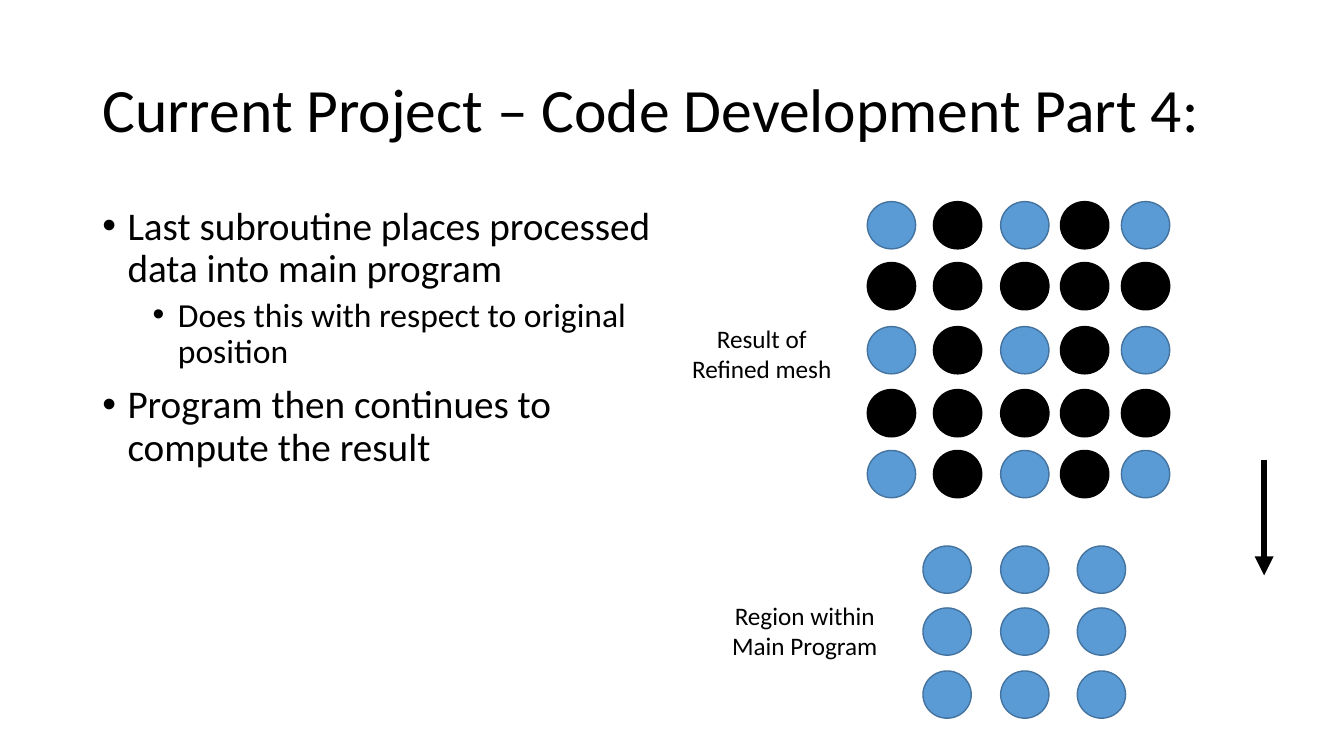
from lxml import etree
from pptx import Presentation
from pptx.dml.color import RGBColor
from pptx.enum.shapes import MSO_CONNECTOR, MSO_SHAPE
from pptx.enum.text import MSO_ANCHOR, MSO_AUTO_SIZE, PP_ALIGN
from pptx.oxml.ns import qn
from pptx.util import Pt

PX = 9525
STRAIGHT = MSO_CONNECTOR.STRAIGHT
ELLIPSE = MSO_SHAPE.OVAL
MIDDLE = MSO_ANCHOR.MIDDLE
CENTER = PP_ALIGN.CENTER
GROW = MSO_AUTO_SIZE.SHAPE_TO_FIT_TEXT

BLACK = "000000"
COARSE_NODE = ("5B9BD5", "43739E")
REFINED_NODE = (BLACK, BLACK)
NODE_SIZE = (46, 45)

MESH_COLUMNS = (826, 889, 953, 1010, 1068)
MESH_ROWS = (192, 250, 311, 371, 429)
REGION_COLUMNS = (879, 953, 1026)
REGION_ROWS = (520, 579, 639)

TITLE = {"line_spacing": 0.9}
LABEL = {"alignment": CENTER}
POINT = {"line_spacing": 0.9, "space_before": Pt(10)}
SUBPOINT = {"line_spacing": 0.9, "space_before": Pt(5), "level": 1}


def color(value):
    return RGBColor.from_string(value)


def px(*lengths):
    return [length * PX for length in lengths]


class MeshSlide:
    """Draws text, mesh nodes and arrows in one style on one slide."""

    def __init__(self, slide, font="Calibri", ink=BLACK):
        self.shapes = slide.shapes
        self.font = font
        self.ink = ink

    def text(self, box, paragraphs, **frame_format):
        frame = self.shapes.add_textbox(*px(*box)).text_frame
        for name, value in {"word_wrap": True, **frame_format}.items():
            setattr(frame, name, value)
        for index, (words, size, indent, layout) in enumerate(paragraphs):
            paragraph = frame.add_paragraph() if index else frame.paragraphs[0]
            for name, value in layout.items():
                setattr(paragraph, name, value)
            if indent:
                self.bullet(paragraph, indent)
            run = paragraph.add_run()
            run.text = words
            for name, value in {"name": self.font, "size": Pt(size)}.items():
                setattr(run.font, name, value)
            run.font.color.rgb = color(self.ink)

    def bullet(self, paragraph, indent, hanging=24):
        properties = paragraph._p.get_or_add_pPr()
        properties.set("marL", str(indent * PX))
        properties.set("indent", str(-hanging * PX))
        etree.SubElement(properties, qn("a:buFont"), typeface="Arial")
        etree.SubElement(properties, qn("a:buChar"), char="•")

    def node(self, left, top, fill, outline):
        node = self.shapes.add_shape(ELLIPSE, *px(left, top, *NODE_SIZE))
        node.shadow.inherit = False
        node.fill.solid()
        node.fill.fore_color.rgb = color(fill)
        node.line.color.rgb = color(outline)
        node.line.width = Pt(1)

    def mesh(self, columns, rows, refined=False):
        for row, top in enumerate(rows):
            for column, left in enumerate(columns):
                added = refined and (row % 2 or column % 2)
                self.node(left, top, *(REFINED_NODE if added else COARSE_NODE))

    def arrow(self, start, end, width):
        arrow = self.shapes.add_connector(STRAIGHT, *px(*start, *end))
        arrow.line.color.rgb = color(self.ink)
        arrow.line.width = Pt(width)
        etree.SubElement(arrow.line._get_or_add_ln(), qn("a:tailEnd"), type="triangle")
        etree.SubElement(arrow._element.spPr, qn("a:effectLst"))


def main():
    deck = Presentation()
    deck.slide_width, deck.slide_height = px(1280, 720)
    page = MeshSlide(deck.slides.add_slide(deck.slide_layouts[6]))

    page.text(
        (88, 38, 1104, 139),
        [("Current Project – Code Development Part 4:", 44, 0, TITLE)],
        vertical_anchor=MIDDLE,
    )
    page.text(
        (88, 192, 544, 457),
        [
            ("Last subroutine places processed data into main program", 28, 24, POINT),
            ("Does this with respect to original position", 24, 72, SUBPOINT),
            ("Program then continues to compute the result", 28, 24, POINT),
        ],
    )
    page.mesh(MESH_COLUMNS, MESH_ROWS, refined=True)
    page.text((643, 303, 165, 68), [("Result of Refined mesh", 18, 0, LABEL)], auto_size=GROW)
    page.mesh(REGION_COLUMNS, REGION_ROWS)
    page.text((680, 567, 173, 68), [("Region within Main Program", 18, 0, LABEL)], auto_size=GROW)
    page.arrow((1204, 438), (1204, 548), 4.5)

    deck.save("out.pptx")


if __name__ == "__main__":
    main()
